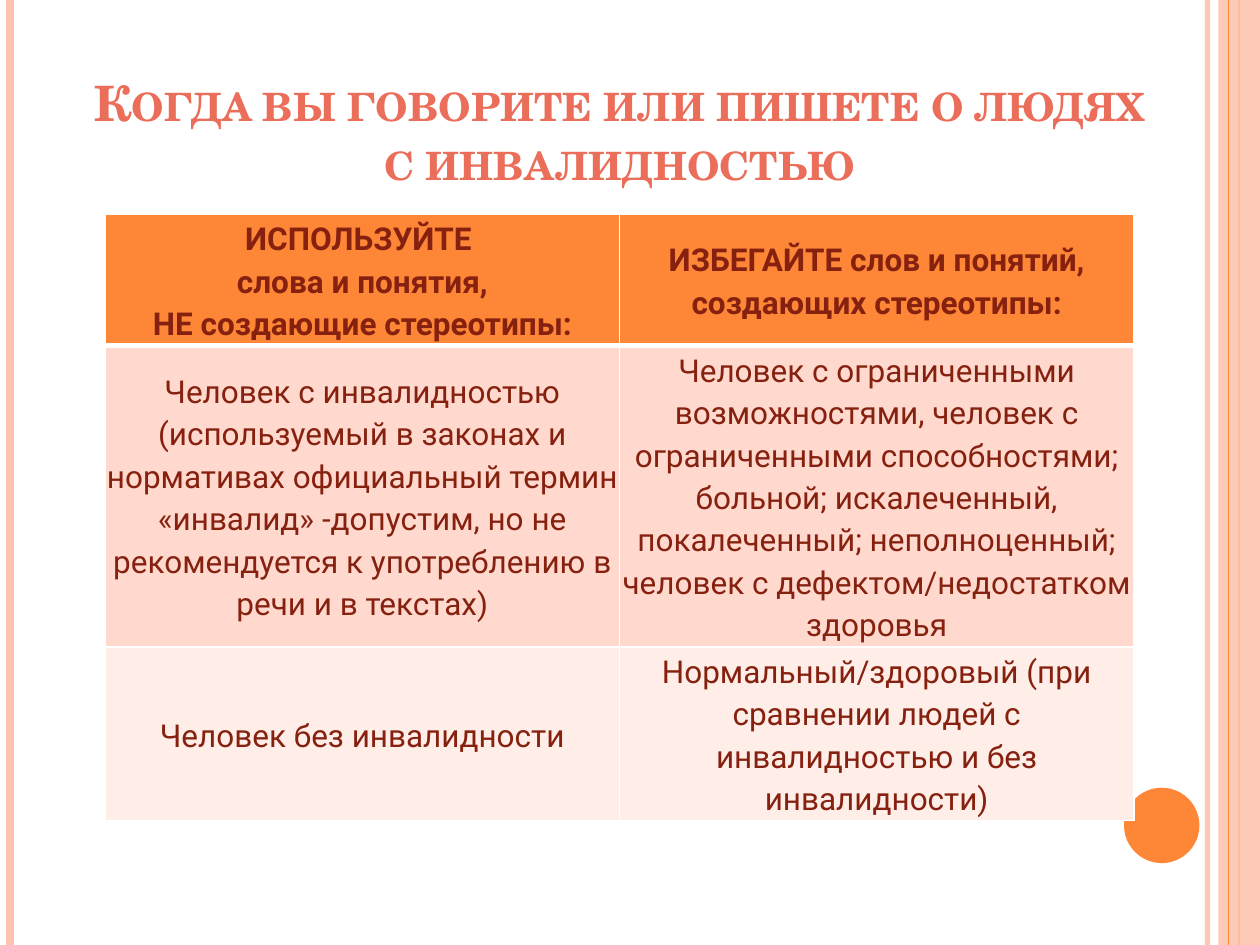
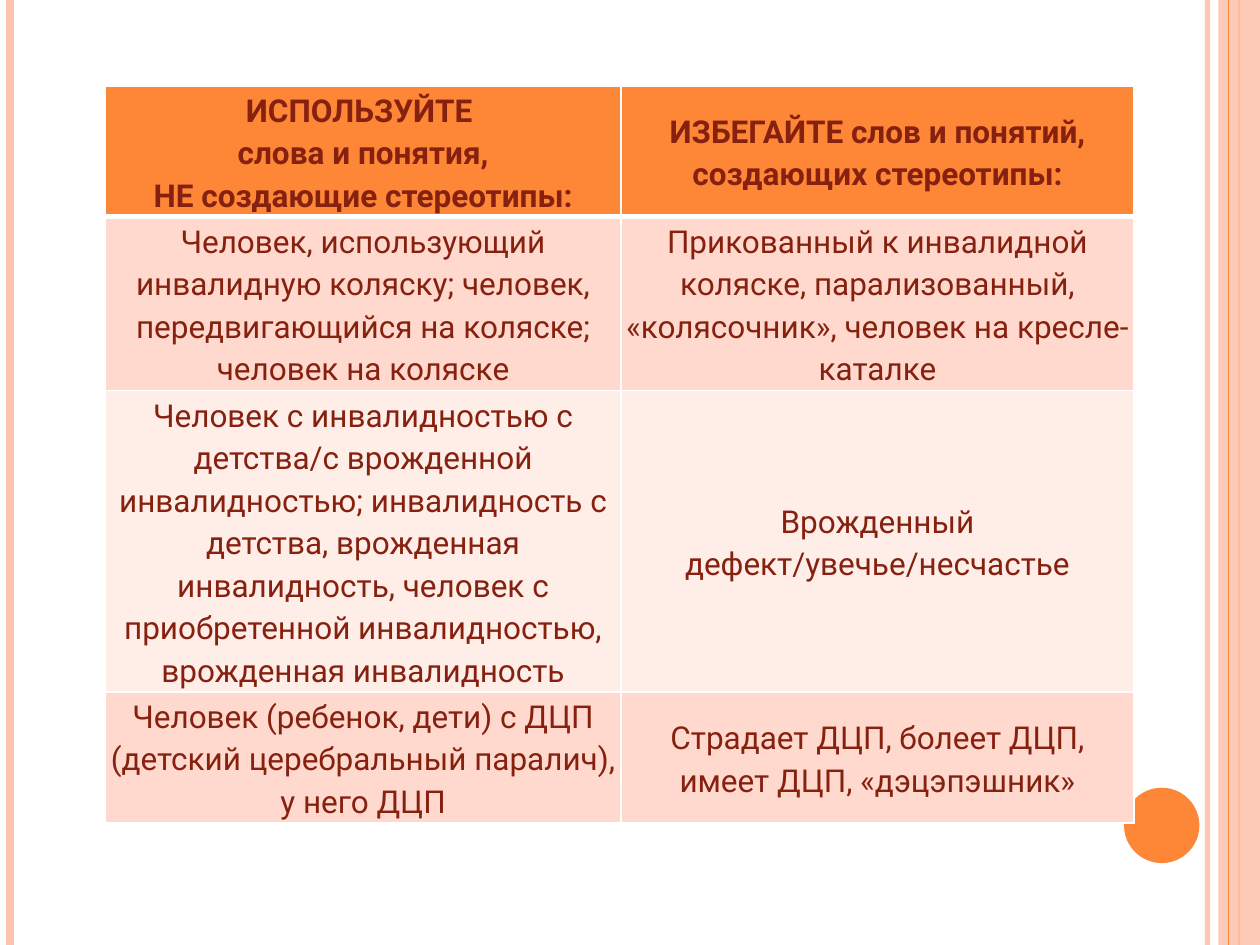
from lxml import etree
from pptx import Presentation
from pptx.dml.color import RGBColor
from pptx.enum import shapes, text
from pptx.oxml.ns import qn
from pptx.util import Cm, Pt

# Content: every row is (lines of text it holds, left cell, right cell)
HEADER = (3, "ИСПОЛЬЗУЙТЕ \nслова и понятия,\vНЕ создающие стереотипы:",
          "ИЗБЕГАЙТЕ слов и понятий,\vсоздающих стереотипы:")
SLIDES = [
    {
        "title": "Когда вы говорите или пишете о людях с инвалидностью",
        "top": 4.32,
        "columns": (10.37, 10.37),
        "rows": [
            (7, "Человек с инвалидностью (используемый в законах и нормативах "
                "официальный термин «инвалид» -допустим, но не рекомендуется "
                "к употреблению в речи и в текстах)",
             "Человек с ограниченными возможностями, человек с ограниченными "
             "способностями; больной; искалеченный, покалеченный; неполноценный; "
             "человек с дефектом/недостатком здоровья"),
            (4, "Человек без инвалидности",
             "Нормальный/здоровый (при сравнении людей с инвалидностью "
             "и без инвалидности)"),
        ],
    },
    {
        "title": None,
        "top": 1.73,
        "columns": (10.4, 10.34),
        "rows": [
            (4, "Человек, использующий инвалидную коляску; человек, "
                "передвигающийся на коляске; человек на коляске",
             "Прикованный к инвалидной коляске, парализованный, «колясочник», "
             "человек на кресле-каталке"),
            (7, "Человек с инвалидностью с детства/с врожденной инвалидностью; "
                "инвалидность с детства, врожденная инвалидность, человек с "
                "приобретенной инвалидностью,\vврожденная инвалидность",
             "Врожденный дефект/увечье/несчастье"),
            (3, "Человек (ребенок, дети) с ДЦП (детский церебральный паралич), "
                "у него ДЦП",
             "Страдает ДЦП, болеет ДЦП, имеет ДЦП, «дэцэпэшник»"),
        ],
    },
]

# Shared style
COLORS = {"peach": "FEC3AE", "orange": "FE8637", "title": "EB6E5A",
          "text": "862110", "odd": "FFD9CE", "even": "FFEDE8", "border": "FFFFFF"}
WIDTH, HEIGHT = 25.4, 19.05
TABLE_LEFT, LINE_HEIGHT, CELL_MARGIN = 2.12, 0.86, 0.03
# Vertical lines: x, colour, width in points, opacity in percent
LINES_BEHIND = [(24.34, "peach", 3, 93), (0.2, "peach", 4.5, 100),
                (24.98, "orange", 1.5, 100)]
LINES_FRONT = [(24.77, "orange", 0.75, 100)]


def color(name):
    return RGBColor.from_string(COLORS[name])


def set_opacity(shape, percent):
    for value in shape.element.spPr.iter(qn("a:srgbClr")):
        etree.SubElement(value, qn("a:alpha"), val=str(percent * 1000))


def write_text(frame, content, font, size, fill, bold=False, small_caps=False,
               line_spacing=None):
    frame.text = content
    for paragraph in frame.paragraphs:
        paragraph.alignment = text.PP_ALIGN.CENTER
        paragraph.line_spacing = line_spacing
        for run in paragraph.runs:
            run.font.name, run.font.size, run.font.bold = font, Pt(size), bold
            run.font.color.rgb = color(fill)
            if small_caps:
                run.font.element.set("cap", "small") if hasattr(run.font, "element") \
                    else run._r.get_or_add_rPr().set("cap", "small")


def add_vertical_lines(slide, lines):
    for x, name, width, opacity in lines:
        line = slide.shapes.add_connector(shapes.MSO_CONNECTOR.STRAIGHT,
                                          Cm(x), 0, Cm(x), Cm(HEIGHT))
        line.line.color.rgb, line.line.width = color(name), Pt(width)
        if opacity < 100:
            set_opacity(line, opacity)
        etree.SubElement(line.element.spPr, qn("a:effectLst"))


def add_filled_shape(slide, kind, left, top, width, height, name):
    shape = slide.shapes.add_shape(kind, Cm(left), Cm(top), Cm(width), Cm(height))
    shape.shadow.inherit = False
    shape.fill.solid()
    shape.fill.fore_color.rgb = color(name)
    shape.line.fill.background()
    return shape


def add_decoration(slide):
    add_vertical_lines(slide, LINES_BEHIND)
    band = add_filled_shape(slide, shapes.MSO_SHAPE.RECTANGLE,
                            24.56, 0, WIDTH - 24.56, HEIGHT, "peach")
    set_opacity(band, 87)
    add_vertical_lines(slide, LINES_FRONT)
    add_filled_shape(slide, shapes.MSO_SHAPE.OVAL, 22.66, 15.88, 1.52, 1.52, "orange")


def format_title(title, content):
    title.left, title.top, title.width, title.height = Cm(1.27), Cm(1.32), Cm(22.43), Cm(3.81)
    frame = title.text_frame
    frame.word_wrap = True
    frame.auto_size = text.MSO_AUTO_SIZE.NONE
    frame.vertical_anchor = text.MSO_ANCHOR.BOTTOM
    frame.margin_bottom = Cm(1.3)
    write_text(frame, content, "TeX Gyre Schola", 27.9, "title",
               bold=True, small_caps=True)


def set_borders(cell, top, bottom):
    properties = cell._tc.get_or_add_tcPr()
    sides = (("a:lnL", 1), ("a:lnR", 1), ("a:lnT", top), ("a:lnB", bottom))
    for position, (tag, width) in enumerate(sides):
        border = etree.Element(qn(tag), w=str(Pt(width)))
        fill = etree.SubElement(border, qn("a:solidFill"))
        etree.SubElement(fill, qn("a:srgbClr"), val=COLORS["border"])
        properties.insert(position, border)


def add_word_table(slide, top, columns, rows):
    rows = [HEADER] + rows
    heights = [lines * LINE_HEIGHT + 2 * CELL_MARGIN for lines, *_ in rows]
    table = slide.shapes.add_table(len(rows), len(columns), Cm(TABLE_LEFT), Cm(top),
                                   Cm(sum(columns)), Cm(sum(heights))).table
    for column, width in zip(table.columns, columns):
        column.width = Cm(width)
    for index, (lines, *contents) in enumerate(rows):
        table.rows[index].height = Cm(heights[index])
        fill = "orange" if index == 0 else ("even", "odd")[index % 2]
        for cell, content in zip(table.rows[index].cells, contents):
            cell.margin_left = cell.margin_right = Cm(CELL_MARGIN)
            cell.margin_top = cell.margin_bottom = Cm(CELL_MARGIN)
            cell.vertical_anchor = text.MSO_ANCHOR.MIDDLE
            cell.fill.solid()
            cell.fill.fore_color.rgb = color(fill)
            set_borders(cell, top=3 if index == 1 else 1, bottom=3 if index == 0 else 1)
            write_text(cell.text_frame, content, "Roboto", 18, "text",
                       bold=index == 0, line_spacing=1.15)


def main():
    presentation = Presentation()
    presentation.slide_width, presentation.slide_height = Cm(WIDTH), Cm(HEIGHT)
    title_only, blank = presentation.slide_layouts[5], presentation.slide_layouts[6]
    for content in SLIDES:
        slide = presentation.slides.add_slide(title_only if content["title"] else blank)
        add_decoration(slide)
        if content["title"]:
            format_title(slide.shapes.title, content["title"])
        add_word_table(slide, content["top"], content["columns"], content["rows"])
    presentation.save("out.pptx")


if __name__ == "__main__":
    main()
